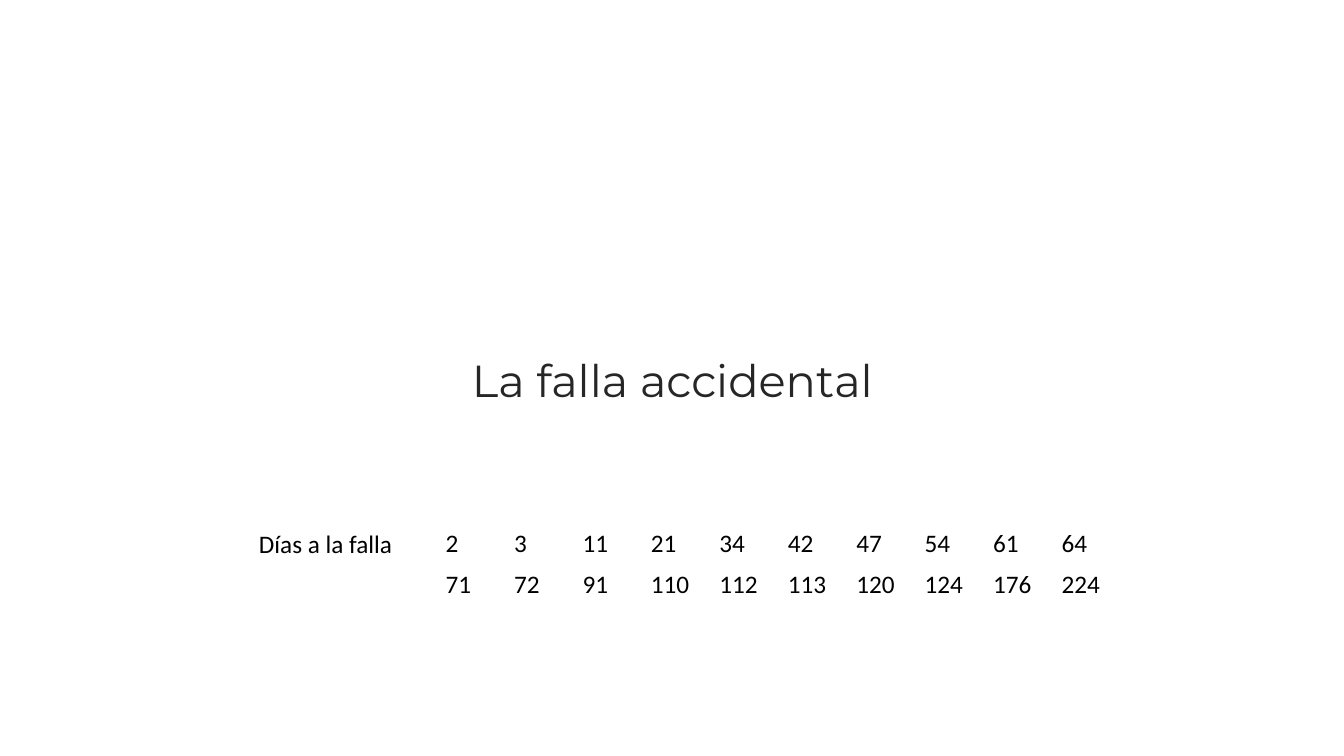
from pptx import Presentation
from pptx import util as u
from pptx.dml.color import RGBColor
from pptx.enum import text

COLORS = {"title": "262626", "body": "000000"}
TITLE_FORMAT = {"name": "Montserrat", "size": u.Pt(32), "bold": False}
BODY_FORMAT = {"name": "Calibri", "size": u.Pt(18), "bold": False}
FAILURE_DAYS = [
    [2, 3, 11, 21, 34, 42, 47, 54, 61, 64],
    [71, 72, 91, 110, 112, 113, 120, 124, 176, 224],
]


def write(para, words, font_format, color):
    span = para.add_run()
    span.text = words
    for name, value in font_format.items():
        setattr(span.font, name, value)
    span.font.color.rgb = RGBColor.from_string(COLORS[color])


def place_title(page, left, top, width, height):
    title = page.shapes.title
    title.left, title.top = u.Inches(left), u.Inches(top)
    title.width, title.height = u.Inches(width), u.Inches(height)
    frame = title.text_frame
    frame.word_wrap = True
    frame.vertical_anchor = text.MSO_ANCHOR.BOTTOM
    para = frame.paragraphs[0]
    para.alignment = text.PP_ALIGN.CENTER
    para.line_spacing = 0.9
    write(para, "La falla accidental", TITLE_FORMAT, "title")


def place_row_label(page, left, top, width, height):
    box = page.shapes.add_textbox(
        u.Inches(left), u.Inches(top), u.Inches(width), u.Inches(height))
    frame = box.text_frame
    frame.word_wrap = True
    frame.auto_size = text.MSO_AUTO_SIZE.SHAPE_TO_FIT_TEXT
    write(frame.paragraphs[0], "Días a la falla", BODY_FORMAT, "body")


def place_days_table(page, left, top, width, height):
    table = page.shapes.add_table(
        len(FAILURE_DAYS), len(FAILURE_DAYS[0]),
        u.Inches(left), u.Inches(top), u.Inches(width), u.Inches(height)).table
    table.first_row = table.horz_banding = False
    for row, days in zip(table.rows, FAILURE_DAYS):
        for cell, day in zip(row.cells, days):
            cell.fill.background()
            write(cell.text_frame.paragraphs[0], str(day), BODY_FORMAT, "body")


def main():
    deck = Presentation()
    deck.slide_width, deck.slide_height = u.Inches(13.33), u.Inches(7.5)
    page = deck.slides.add_slide(deck.slide_layouts.get_by_name("Title Only"))
    place_title(page, 1.67, 2, 10, 2.09)
    place_days_table(page, 4.32, 5.19, 6.79, 0.8)
    place_row_label(page, 2.47, 5.19, 1.54, 0.4)
    deck.save("out.pptx")


if __name__ == "__main__":
    main()
